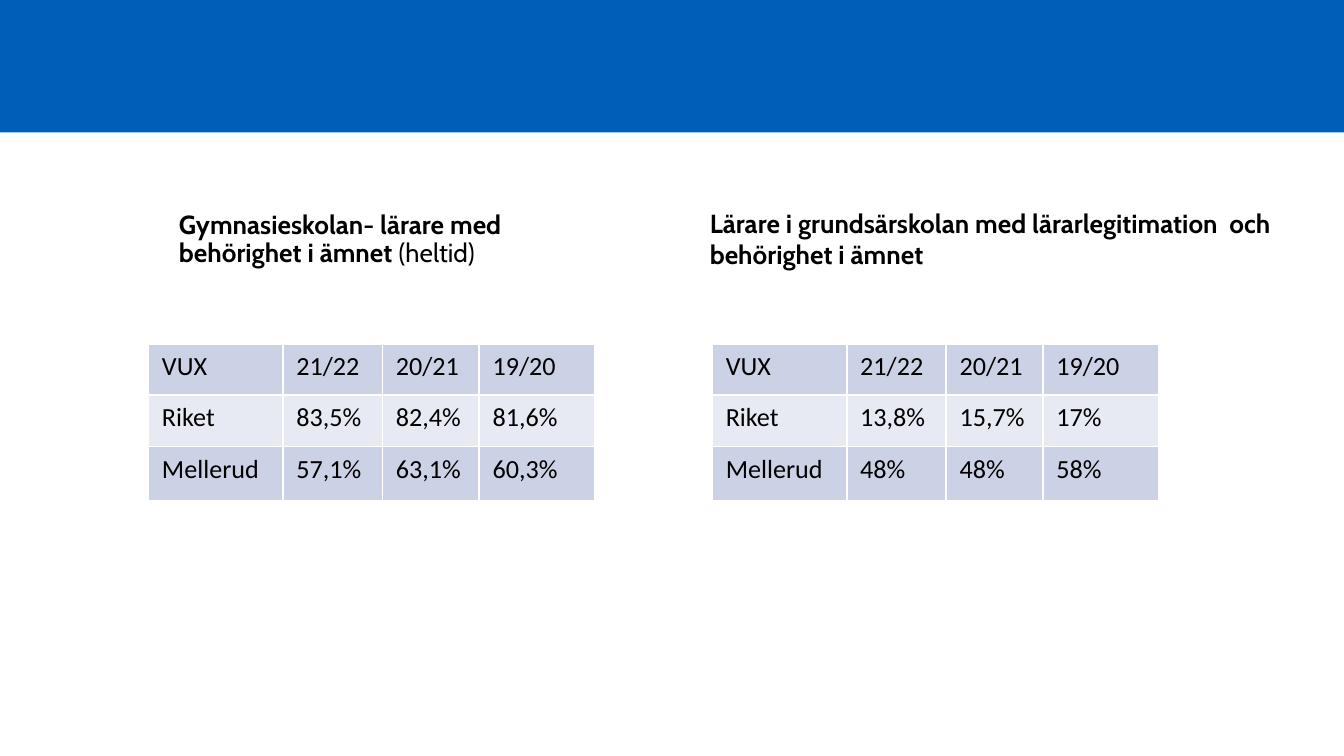
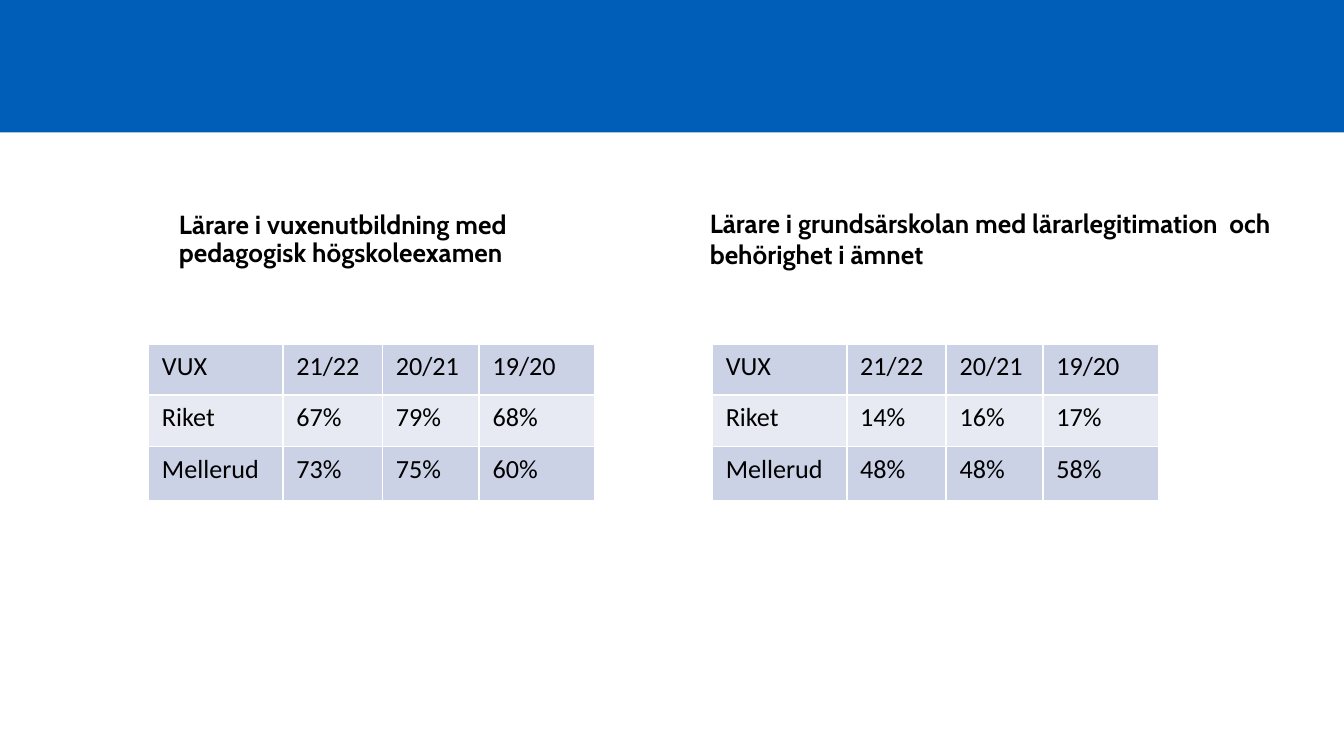
"""Build two slides that compare teacher qualifications in paired tables."""
from typing import NamedTuple

from lxml.etree import SubElement
from pptx import Presentation
from pptx.dml.color import RGBColor
from pptx.enum.shapes import MSO_SHAPE
from pptx.enum.text import MSO_ANCHOR, MSO_AUTO_SIZE
from pptx.oxml.ns import qn
from pptx.util import Inches, Length, Pt

COLS, ROWS = 100, 56.25
BLUE, BLACK, WHITE = "005EB8", "000000", "FFFFFF"
BANDS = ("CCD2E6", "E7EAF3")
SIZE = 14
TOP = 25.58
WIDTHS = (10, 7.4, 7.2, 8.6)
HEIGHTS = (3.8, 3.85, 4.05)
HEAD = ("VUX", "21/22", "20/21", "19/20")
AREAS = ("Riket", "Mellerud")


class Box(NamedTuple):
    """Place on the grid."""
    left: float
    top: float
    width: float
    height: float


class Side(NamedTuple):
    """Place and style of one half of a slide."""
    title: Box
    table: float
    anchor: MSO_ANCHOR
    space: float
    fit: MSO_AUTO_SIZE


class Panel(NamedTuple):
    """Heading, its light ending and the shares per area."""
    bold: str
    light: str
    shares: tuple[tuple[str, ...], ...]


SIDES = (
    Side(Box(12.33, 12.45, 31.9, 8), 11.05, MSO_ANCHOR.BOTTOM, 0.9, MSO_AUTO_SIZE.NONE),
    Side(Box(51.83, 14.95, 46.2, 5.7), 53, MSO_ANCHOR.TOP, 1, MSO_AUTO_SIZE.SHAPE_TO_FIT_TEXT),
)
SPECIAL = "Lärare i grundsärskolan med lärarlegitimation  och behörighet i ämnet"
LOCAL = ("48%", "48%", "58%")
PAGES = (
    (Panel("Gymnasieskolan- lärare med behörighet i ämnet ", "(heltid)",
           (("83,5%", "82,4%", "81,6%"), ("57,1%", "63,1%", "60,3%"))),
     Panel(SPECIAL, "", (("13,8%", "15,7%", "17%"), LOCAL))),
    (Panel("Lärare i vuxenutbildning med \vpedagogisk högskoleexamen", "",
           (("67%", "79%", "68%"), ("73%", "75%", "60%"))),
     Panel(SPECIAL, "", (("14%", "16%", "17%"), LOCAL))),
)


def tint(code: str) -> RGBColor:
    """Turn a hex string into a colour."""
    return RGBColor.from_string(code)


def unit(count: float) -> Length:
    """Turn grid steps into a length."""
    return Inches(count / 10)


def place(box: Box) -> list[Length]:
    """Turn a grid box into lengths."""
    return [unit(part) for part in box]


def style(run, face: str, bold: bool = False) -> None:
    """Format one run."""
    run.font.name, run.font.size, run.font.bold = face, Pt(SIZE), bold
    run.font.color.rgb = tint(BLACK)


def draw_band(slide) -> None:
    """Draw the blue band across the top."""
    band = slide.shapes.add_shape(MSO_SHAPE.RECTANGLE, *place(Box(0, 0, COLS, 9.85)))
    band.shadow.inherit = False
    band.fill.solid()
    band.fill.fore_color.rgb = tint(BLUE)
    band.line.fill.background()


def draw_title(slide, side: Side, panel: Panel) -> None:
    """Write the heading above a table."""
    frame = slide.shapes.add_textbox(*place(side.title)).text_frame
    frame.word_wrap, frame.auto_size = True, side.fit
    frame.vertical_anchor = side.anchor
    line = frame.paragraphs[0]
    line.text = panel.bold
    line.line_spacing = side.space
    for run in line.runs:
        style(run, "Cabin", True)
    if panel.light:
        run = line.add_run()
        run.text = panel.light
        style(run, "Cabin")


def draw_cell(cell, text: str, fill: str) -> None:
    """Fill, frame and write one cell."""
    props = cell._tc.get_or_add_tcPr()
    for edge in ("a:lnL", "a:lnR", "a:lnT", "a:lnB"):
        line = SubElement(props, qn(edge), w=str(Pt(1)))
        paint = SubElement(line, qn("a:solidFill"))
        SubElement(paint, qn("a:srgbClr"), val=WHITE)
    cell.fill.solid()
    cell.fill.fore_color.rgb = tint(fill)
    cell.text_frame.text = text
    style(cell.text_frame.paragraphs[0].runs[0], "Calibri")


def draw_table(slide, left: float, panel: Panel) -> None:
    """Draw the table of shares."""
    data = [HEAD, *((area, *row) for area, row in zip(AREAS, panel.shares))]
    box = Box(left, TOP, sum(WIDTHS), sum(HEIGHTS))
    table = slide.shapes.add_table(len(data), len(HEAD), *place(box)).table
    table.first_row = table.horz_banding = False
    for col, width in zip(table.columns, WIDTHS):
        col.width = unit(width)
    for r, (row, height) in enumerate(zip(data, HEIGHTS)):
        table.rows[r].height = unit(height)
        for c, text in enumerate(row):
            draw_cell(table.cell(r, c), text, BANDS[r % 2])


def main() -> None:
    """Build and save the deck."""
    deck = Presentation()
    deck.slide_width, deck.slide_height = unit(COLS), unit(ROWS)
    for page in PAGES:
        slide = deck.slides.add_slide(deck.slide_layouts[6])
        draw_band(slide)
        for side, panel in zip(SIDES, page):
            draw_title(slide, side, panel)
            draw_table(slide, side.table, panel)
    deck.save("out.pptx")


if __name__ == "__main__":
    main()
